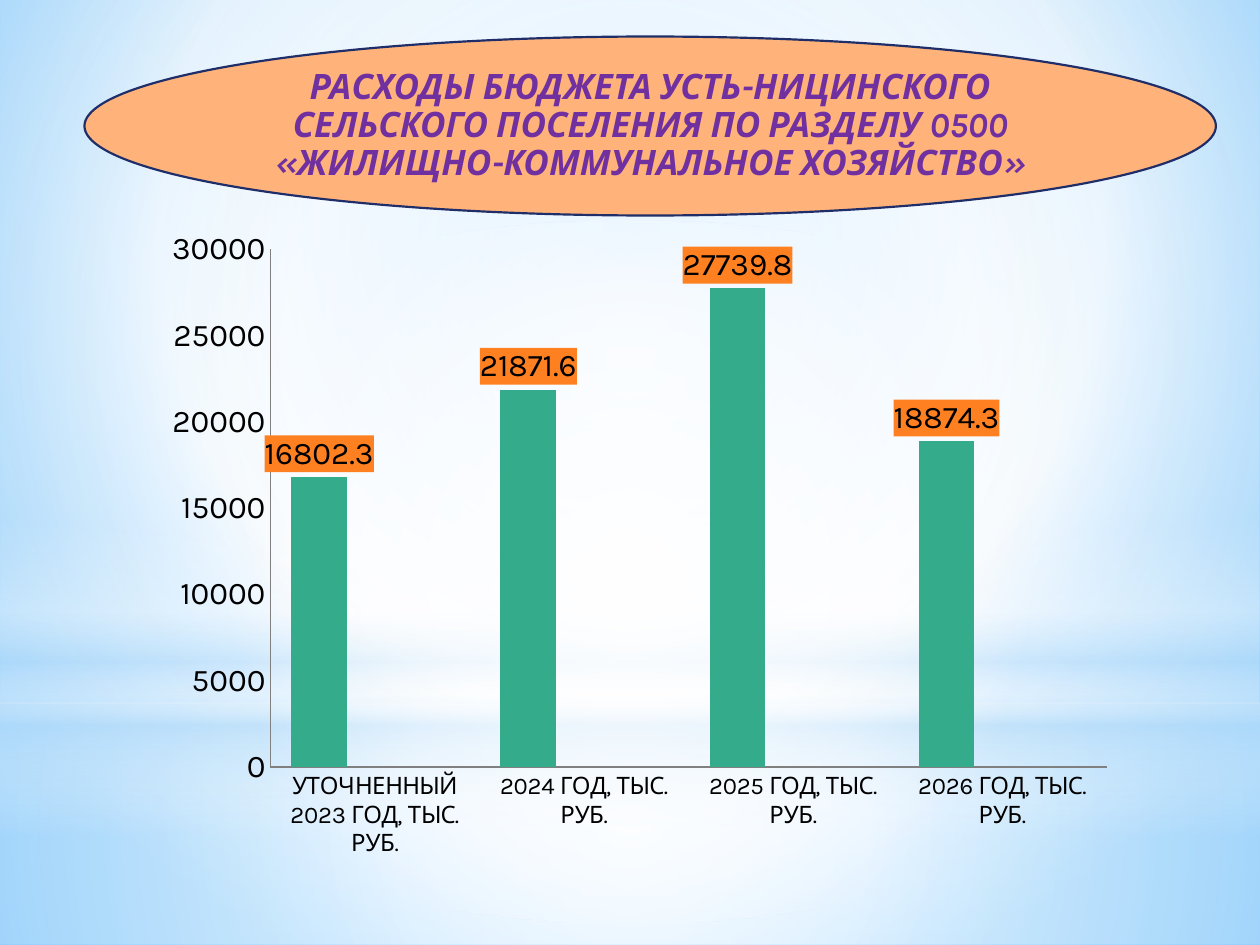
from dataclasses import dataclass
from typing import Optional

from lxml.etree import SubElement
from pptx import Presentation
from pptx.chart.data import CategoryChartData
from pptx.dml.color import RGBColor
from pptx.enum.chart import XL_CHART_TYPE as ChartType, XL_LABEL_POSITION as LabelPosition
from pptx.enum.chart import XL_TICK_MARK as TickMark
from pptx.enum.shapes import MSO_SHAPE as Shape
from pptx.enum.text import MSO_ANCHOR as Anchor, MSO_AUTO_SIZE as AutoSize, PP_ALIGN as Align
from pptx.oxml import parse_xml
from pptx.oxml.ns import nsdecls, qn
from pptx.util import Inches, Pt

WIDTH, HEIGHT = 10, 7.5
FONT = "Karla"
WHITE, SKY = "FFFFFF", "B4DCFA"
HEADING = ("РАСХОДЫ БЮДЖЕТА УСТЬ-НИЦИНСКОГО СЕЛЬСКОГО ПОСЕЛЕНИЯ ПО РАЗДЕЛУ 0500 "
           "«ЖИЛИЩНО-КОММУНАЛЬНОЕ ХОЗЯЙСТВО»")
SPENDING = {
    "УТОЧНЕННЫЙ 2023 ГОД, ТЫС. РУБ.": 16802.3,
    "2024 ГОД, ТЫС. РУБ.": 21871.6,
    "2025 ГОД, ТЫС. РУБ.": 27739.8,
    "2026 ГОД, ТЫС. РУБ.": 18874.3,
}
SERIES_COLORS = {"Series 1": "34AC8B", "Series 2": "5ECCF3", "Series 3": "A7EA52"}


@dataclass(frozen=True)
class Stop:
    """A gradient stop: position and opacity in percent."""
    position: int
    color: str
    opacity: int = 100


@dataclass(frozen=True)
class Glow:
    """A full-width gradient layer; focus is None for a vertical gradient."""
    outline: Shape
    top: float
    height: float
    stops: tuple[Stop, ...]
    focus: Optional[tuple[int, int, int, int]] = (50, 50, 50, 50)


BACKDROP = (Stop(0, "9ED5FF"), Stop(60, WHITE), Stop(100, "5BB9FF"))
GLOWS = (
    Glow(Shape.RECTANGLE, 0.744, 0.256, (Stop(0, WHITE, 91), Stop(37, WHITE, 76), Stop(100, SKY, 79))),
    Glow(Shape.RECTANGLE, 0, 0.744, (Stop(0, WHITE, 89), Stop(48, WHITE, 62), Stop(100, SKY, 79))),
    Glow(Shape.RECTANGLE, 0.55, 0.333,
         (Stop(0, WHITE, 0), Stop(29, WHITE, 30), Stop(45, SKY, 40),
          Stop(55, WHITE, 26), Stop(65, SKY, 60), Stop(100, WHITE, 0)), None),
    Glow(Shape.OVAL, 0.233, 0.744, (Stop(0, WHITE), Stop(56, WHITE, 0))),
)


def rgb(color: str) -> RGBColor:
    """Turn a hex string into a colour."""
    return RGBColor.from_string(color)


def set_gradient(properties, stops: tuple[Stop, ...], focus) -> None:
    """Replace the empty fill of a properties element with a gradient."""
    listed = "".join(
        f'<a:gs pos="{stop.position * 1000}"><a:srgbClr val="{stop.color}">'
        f'<a:alpha val="{stop.opacity * 1000}"/></a:srgbClr></a:gs>' for stop in stops)
    if focus:
        sides = " ".join(f'{side}="{share * 1000}"' for side, share in zip("ltrb", focus))
        direction = f'<a:path path="circle"><a:fillToRect {sides}/></a:path>'
    else:
        direction = '<a:lin ang="5400000" scaled="0"/>'
    gradient = parse_xml(f'<a:gradFill {nsdecls("a")} rotWithShape="1">'
                         f'<a:gsLst>{listed}</a:gsLst>{direction}</a:gradFill>')
    properties.replace(properties.find(qn("a:noFill")), gradient)


def draw_glow(slide, glow: Glow) -> None:
    """Draw one gradient layer across the slide."""
    layer = slide.shapes.add_shape(glow.outline, 0, Inches(glow.top * HEIGHT),
                                   Inches(WIDTH), Inches(glow.height * HEIGHT))
    layer.shadow.inherit = False
    layer.line.fill.background()
    layer.fill.background()
    set_gradient(layer._element.spPr, glow.stops, glow.focus)


def style_font(font, size: float, color: str = "000000") -> None:
    """Set the typeface, size and colour of a font."""
    font.name, font.size = FONT, Pt(size)
    font.color.rgb = rgb(color)


def draw_spending(slide) -> None:
    """Draw the spending column chart."""
    data = CategoryChartData()
    data.categories = list(SPENDING)
    for name in SERIES_COLORS:
        first = name == "Series 1"
        data.add_series(name, SPENDING.values() if first else [None] * len(SPENDING))
    chart = slide.shapes.add_chart(ChartType.COLUMN_CLUSTERED, Inches(1.22), Inches(1.72),
                                   Inches(7.72), Inches(5.2), data).chart
    chart.has_legend = chart.has_title = False
    style_font(chart.font, 18)
    plot = chart.plots[0]
    plot.gap_width, plot.overlap, plot.vary_by_categories = 75, 0, False
    for series in plot.series:
        series.format.fill.solid()
        series.format.fill.fore_color.rgb = rgb(SERIES_COLORS[series.name])
    labels = plot.series[0].data_labels
    labels.show_value = True
    labels.number_format, labels.number_format_is_linked = "0.0", False
    labels.position = LabelPosition.OUTSIDE_END
    style_font(labels.font, 18)
    label_fill = parse_xml(f'<c:spPr {nsdecls("c", "a")}><a:solidFill>'
                           '<a:srgbClr val="FF8021"/></a:solidFill></c:spPr>')
    labels._element.find(qn("c:numFmt")).addnext(label_fill)
    for axis, size in ((chart.category_axis, 13.7), (chart.value_axis, 18)):
        axis.major_tick_mark = axis.minor_tick_mark = TickMark.NONE
        axis.has_major_gridlines = False
        axis.format.line.color.rgb = rgb("808080")
        axis.format.line.width = Pt(0.75)
        style_font(axis.tick_labels.font, size)
    scale = chart.value_axis
    scale.minimum_scale, scale.maximum_scale, scale.major_unit = 0, 30000, 5000
    scale.tick_labels.number_format = "0"
    scale.tick_labels.number_format_is_linked = False
    place_plot(chart, {"x": 0.12, "y": 0.05, "w": 0.86, "h": 0.79})


def place_plot(chart, shares: dict[str, float]) -> None:
    """Fix the inner plot area as shares of the chart."""
    area = chart._chartSpace.chart.plotArea
    for old in area.findall(qn("c:layout")):
        area.remove(old)
    layout = parse_xml(f'<c:layout {nsdecls("c")}><c:manualLayout/></c:layout>')
    settings = {"layoutTarget": "inner", "xMode": "edge", "yMode": "edge", **shares}
    for name, value in settings.items():
        SubElement(layout[0], qn(f"c:{name}")).set("val", str(value))
    area.insert(0, layout)


def draw_heading(slide) -> None:
    """Draw the oval and set the title inside it."""
    box = [Inches(length) for length in (0.67, 0.29, 8.98, 1.42)]
    oval = slide.shapes.add_shape(Shape.OVAL, *box)
    oval.shadow.inherit = False
    oval.fill.solid()
    oval.fill.fore_color.rgb = rgb("FFB37A")
    oval.line.color.rgb = rgb("1F2E69")
    oval.line.width = Pt(1.25)

    title = slide.shapes.title
    title.left, title.top, title.width, title.height = box
    oval._element.addnext(title._element)
    frame = title.text_frame
    frame.word_wrap, frame.auto_size = True, AutoSize.NONE
    frame.vertical_anchor = Anchor.MIDDLE
    frame.margin_left = frame.margin_right = Inches(1.41)
    frame.margin_top = frame.margin_bottom = 0
    paragraph = frame.paragraphs[0]
    paragraph.alignment, paragraph.line_spacing = Align.CENTER, 0.9
    run = paragraph.add_run()
    run.text = HEADING
    style_font(run.font, 20, "7030A0")
    run.font.bold = run.font.italic = True


def main() -> None:
    """Build and save the slide."""
    deck = Presentation()
    deck.slide_width, deck.slide_height = Inches(WIDTH), Inches(HEIGHT)
    slide = deck.slides.add_slide(deck.slide_layouts[5])
    slide.background.fill.background()
    set_gradient(slide._element.cSld.bg.bgPr, BACKDROP, (20, 10, 20, 60))
    for glow in GLOWS:
        draw_glow(slide, glow)
    draw_spending(slide)
    draw_heading(slide)
    deck.save("out.pptx")


if __name__ == "__main__":
    main()
